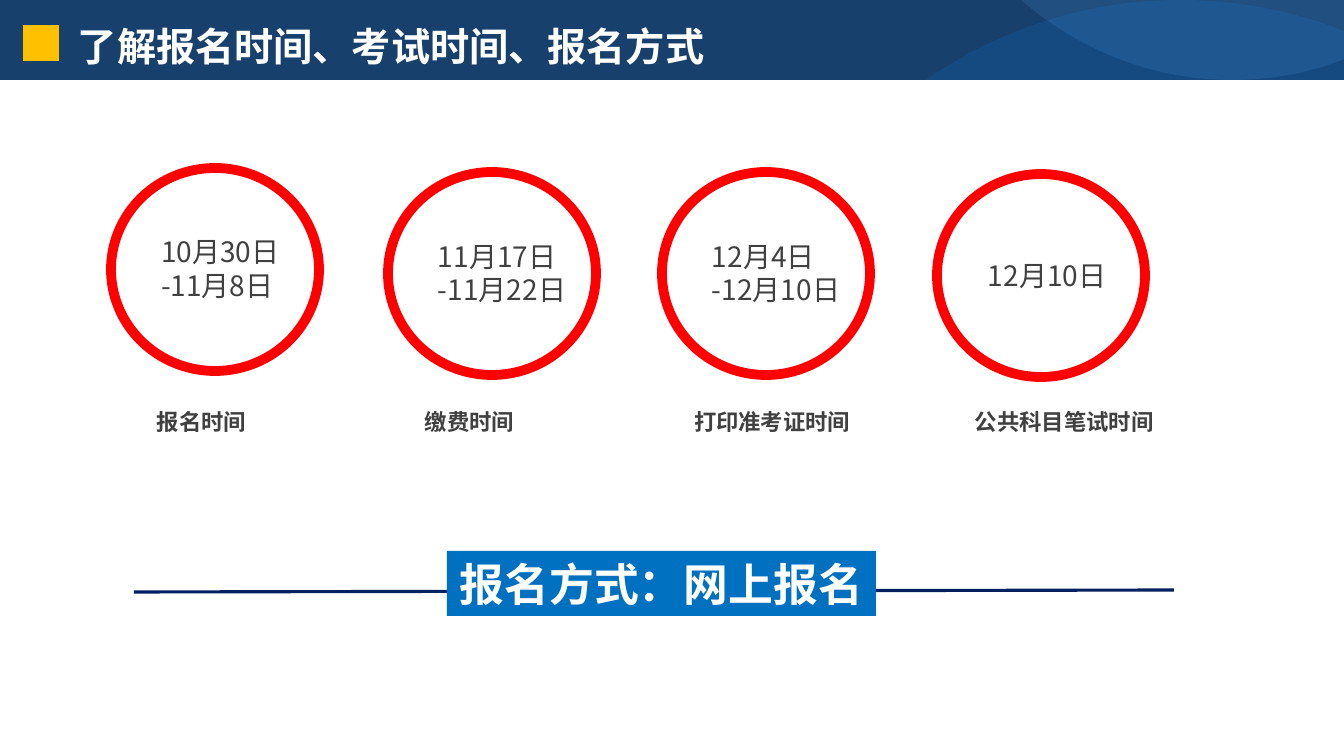
import pptx
import pptx.util
import pptx.dml.color
import pptx.enum.shapes
import pptx.enum.text
import pptx.oxml.ns
import lxml.etree

PX = 914400 / 100.8
FONT = "Noto Sans CJK SC"
KIND = pptx.enum.shapes.MSO_SHAPE
ALIGN = pptx.enum.text.PP_ALIGN
ANCHOR = pptx.enum.text.MSO_ANCHOR

# Circle left, top; date left, top, height; date lines
DATES = [
    (111, 168, 151, 228, 78, ["10月30日", "-11月8日"]),
    (388, 172, 428, 232, 78, ["11月17日", "-11月22日"]),
    (662, 172, 702, 232, 78, ["12月4日", "-12月10日"]),
    (937, 174, 978, 251, 44, ["12月10日"]),
]
# Label left, width, text
LABELS = [
    (147, 179, "报名时间"),
    (415, 179, "缴费时间"),
    (684, 179, "打印准考证时间"),
    (965, 226, "公共科目笔试时间"),
]


def emu(*nums):
    return [pptx.util.Emu(round(n * PX)) for n in nums]


def color(code):
    return pptx.dml.color.RGBColor.from_string(code)


def paint(shape, code, alpha=100):
    shape.shadow.inherit = False
    shape.line.fill.background()
    shape.fill.solid()
    shape.fill.fore_color.rgb = color(code)
    if alpha < 100:
        tone = shape.fill._xPr.find(".//" + pptx.oxml.ns.qn("a:srgbClr"))
        node = lxml.etree.SubElement(tone, pptx.oxml.ns.qn("a:alpha"))
        node.set("val", str(alpha * 1000))


def write(shape, lines, size, code, bold=False, face=FONT, align=ALIGN.LEFT):
    frame = shape.text_frame
    for i, line in enumerate(lines):
        para = frame.add_paragraph() if i else frame.paragraphs[0]
        para.alignment = align
        run = para.add_run()
        run.text = line
        run.font.size = pptx.util.Pt(size)
        run.font.bold = bold
        run.font.name = face
        run.font.color.rgb = color(code)
        # East Asian glyphs take their own font
        east = lxml.etree.Element(pptx.oxml.ns.qn("a:ea"), typeface=FONT)
        run.font._element.find(pptx.oxml.ns.qn("a:latin")).addnext(east)


def fit(shape, size):
    frame = shape.text_frame
    frame.word_wrap = True
    frame.auto_size = pptx.enum.text.MSO_AUTO_SIZE.NONE
    frame.vertical_anchor = ANCHOR.TOP
    frame.margin_left, frame.margin_right = emu(10, 10)
    frame.margin_top, frame.margin_bottom = emu(7, 5)
    for para in frame.paragraphs:
        para.line_spacing = pptx.util.Pt(size * 1.2)


def note(slide, box, lines, size, bold=False):
    shape = slide.shapes.add_textbox(*emu(*box))
    write(shape, lines, size, "404040", bold)
    fit(shape, size)


def block(slide, box, code):
    shape = slide.shapes.add_shape(KIND.RECTANGLE, *emu(*box))
    paint(shape, code)
    return shape


def ring(slide, left, top):
    shape = slide.shapes.add_shape(KIND.OVAL, *emu(left, top, 208, 203))
    shape.shadow.inherit = False
    shape.fill.background()
    shape.line.color.rgb = color("FF0000")
    shape.line.width = pptx.util.Pt(7)


def curve(start, pull, push, end, steps=24):
    # Points along a cubic curve
    dots = []
    for i in range(steps + 1):
        t = i / steps
        u = 1 - t
        dots.append(tuple(
            u**3 * a + 3 * u * u * t * b + 3 * u * t * t * c + t**3 * d
            for a, b, c, d in zip(start, pull, push, end)))
    return dots


def swoosh(slide, dots, code, alpha):
    form = slide.shapes.build_freeform(*emu(*dots[0]), scale=1.0)
    form.add_line_segments([emu(*dot) for dot in dots[1:]], close=True)
    paint(form.convert_to_shape(), code, alpha)


def banner(slide):
    block(slide, (0, 0, 1344, 80), "17406D")
    rise = curve((926, 80), (999, 29), (1087, 0), (1180, 0))
    fall = curve((1180, 0), (1238, 0), (1293, 11), (1344, 31))
    swoosh(slide, rise + fall[1:] + [(1344, 80)], "0F6FC6", 23)
    right = curve((1344, 59), (1310, 73), (1271, 80), (1232, 80))
    left = curve((1232, 80), (1151, 80), (1078, 49), (1021, 0))
    swoosh(slide, right + left[1:] + [(1344, 0)], "59AAF2", 15)


def heading(slide):
    title = slide.shapes.title
    title.left, title.top, title.width, title.height = emu(68, 15, 809, 57)
    write(title, ["了解报名时间、考试时间、报名方式"], 28, "FFFFFF", True)
    fit(title, 28)
    # Raise the title above the banner
    tree = slide.shapes._spTree
    tree.remove(title._element)
    tree.append(title._element)


def rule(slide, *ends):
    line = slide.shapes.add_connector(
        pptx.enum.shapes.MSO_CONNECTOR.STRAIGHT, *emu(*ends))
    line.line.color.rgb = color("002060")
    line.line.width = pptx.util.Pt(2.25)
    lxml.etree.SubElement(line._element.spPr, pptx.oxml.ns.qn("a:effectLst"))


def main():
    deck = pptx.Presentation()
    deck.slide_width, deck.slide_height = emu(1344, 756)
    slide = deck.slides.add_slide(deck.slide_layouts[5])

    # Header
    banner(slide)
    heading(slide)
    block(slide, (23, 25, 36, 36), "FFC000")

    # Dates in rings, with labels below
    for left, top, x, y, high, lines in DATES:
        note(slide, (x, y, 166, high), lines, 20)
        ring(slide, left, top)
    for left, wide, text in LABELS:
        note(slide, (left, 401, wide, 37), [text], 16, True)

    # How to sign up
    rule(slide, 134, 592, 1174, 590)
    sign = block(slide, (447, 551, 429, 65), "0070C0")
    write(sign, ["报名方式：网上报名"], 32, "FFFFFF", True, "Calibri", ALIGN.CENTER)
    sign.text_frame.word_wrap = False
    sign.text_frame.vertical_anchor = ANCHOR.MIDDLE

    deck.save("out.pptx")


if __name__ == "__main__":
    main()
